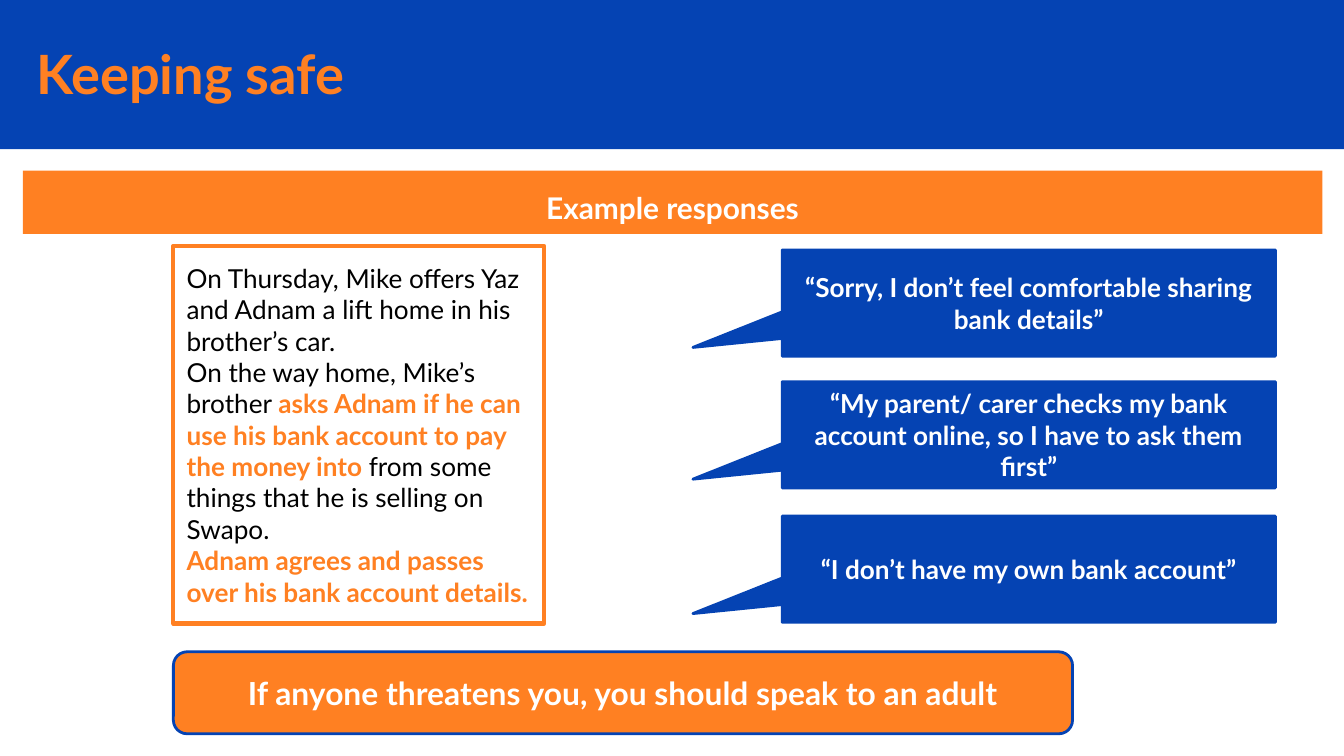
from pptx import Presentation
from pptx.dml.color import RGBColor
from pptx.enum.shapes import MSO_SHAPE as Shape
from pptx.enum.text import MSO_ANCHOR as Anchor, MSO_AUTO_SIZE as AutoSize, PP_ALIGN as Align
from pptx.util import Inches, Pt

BLUE = RGBColor(0x05, 0x43, 0xB3)
ORANGE = RGBColor(0xFF, 0x80, 0x22)
WHITE = RGBColor(0xFF, 0xFF, 0xFF)
BLACK = RGBColor(0, 0, 0)

STORY = [
    [("On Thursday, Mike offers Yaz and Adnam a lift home in his brother’s car.", False)],
    [("On the way home, Mike’s brother ", False),
     ("asks Adnam if he can use his bank account to pay the money into ", True),
     ("from some things that he is selling on Swapo.", False)],
    [("Adnam agrees and passes over his bank account details.", True)],
]
RESPONSES = [
    (1.86, "“Sorry, I don’t feel comfortable sharing bank details”"),
    (2.84, "“My parent/ carer checks my bank account online, so I have to ask them first”"),
    (3.84, "“I don’t have my own bank account”"),
]


def add_block(page, kind, box, fill=None, line=None, width=1.5, adjustments=()):
    block = page.shapes.add_shape(kind, *map(Inches, box))
    block.shadow.inherit = False
    for index, value in enumerate(adjustments):
        block.adjustments[index] = value
    if fill is None:
        block.fill.background()
    else:
        block.fill.solid()
        block.fill.fore_color.rgb = fill
    if line is None:
        block.line.fill.background()
    else:
        block.line.color.rgb = line
        block.line.width = Pt(width)
    return block


def set_frame(shape, margin=0.1, anchor=Anchor.MIDDLE, auto_size=AutoSize.NONE):
    frame = shape.text_frame
    settings = {
        "word_wrap": True, "auto_size": auto_size, "vertical_anchor": anchor,
        "margin_left": Inches(0.1), "margin_right": Inches(0.1),
        "margin_top": Inches(margin), "margin_bottom": Inches(margin),
    }
    for name, value in settings.items():
        setattr(frame, name, value)
    return frame


def add_span(para, text, size, color, bold=True):
    span = para.add_run()
    span.text = text
    for name, value in {"name": "Lato", "size": Pt(size), "bold": bold}.items():
        setattr(span.font, name, value)
    span.font.color.rgb = color


def write_line(frame, text, size, color=WHITE, align=Align.CENTER):
    para = frame.paragraphs[0]
    para.alignment = align
    add_span(para, text, size, color)
    return para


def add_header(page, box):
    left, top, width, height = box
    add_block(page, Shape.RECTANGLE, box, BLUE)
    title = page.shapes.add_textbox(
        Inches(left + 0.17), Inches(top + 0.2), Inches(width - 1.02), Inches(height - 0.42))
    frame = set_frame(title, anchor=Anchor.TOP, auto_size=AutoSize.SHAPE_TO_FIT_TEXT)
    write_line(frame, "Keeping safe", 29, ORANGE, Align.LEFT)


def add_banner(page, box):
    banner = add_block(page, Shape.RECTANGLE, box, ORANGE)
    frame = set_frame(banner, anchor=Anchor.TOP, auto_size=AutoSize.SHAPE_TO_FIT_TEXT)
    write_line(frame, "Example responses", 16).line_spacing = 1.15


def add_story(page, box):
    """Outlined scenario whose key phrases are bold orange."""
    frame = set_frame(add_block(page, Shape.RECTANGLE, box, line=ORANGE, width=2.25), margin=0.05)
    for index, spans in enumerate(STORY):
        para = frame.add_paragraph() if index else frame.paragraphs[0]
        para.alignment = Align.LEFT
        for text, key in spans:
            add_span(para, text, 14, ORANGE if key else BLACK, key)


def add_response(page, box, text):
    bubble = add_block(page, Shape.ROUNDED_RECTANGULAR_CALLOUT, box, BLUE, BLUE,
                       adjustments=(-0.681, 0.418, 0))
    write_line(set_frame(bubble), text, 14)


def add_advice(page, box):
    advice = add_block(page, Shape.ROUNDED_RECTANGLE, box, ORANGE, BLUE, adjustments=(0.167,))
    write_line(set_frame(advice), "If anyone threatens you, you should speak to an adult", 17)


def main():
    deck = Presentation()
    deck.slide_width, deck.slide_height = Inches(10), Inches(10 * 9 / 16)
    page = deck.slides.add_slide(deck.slide_layouts[6])
    add_header(page, (0, 0, 10, 1.11))
    add_story(page, (1.29, 1.83, 2.76, 2.81))
    add_banner(page, (0.17, 1.27, 9.67, 0.47))
    for top, text in RESPONSES:
        add_response(page, (5.82, top, 3.67, 0.79), text)
    add_advice(page, (1.29, 4.85, 6.69, 0.61))
    deck.save("out.pptx")


if __name__ == "__main__":
    main()
